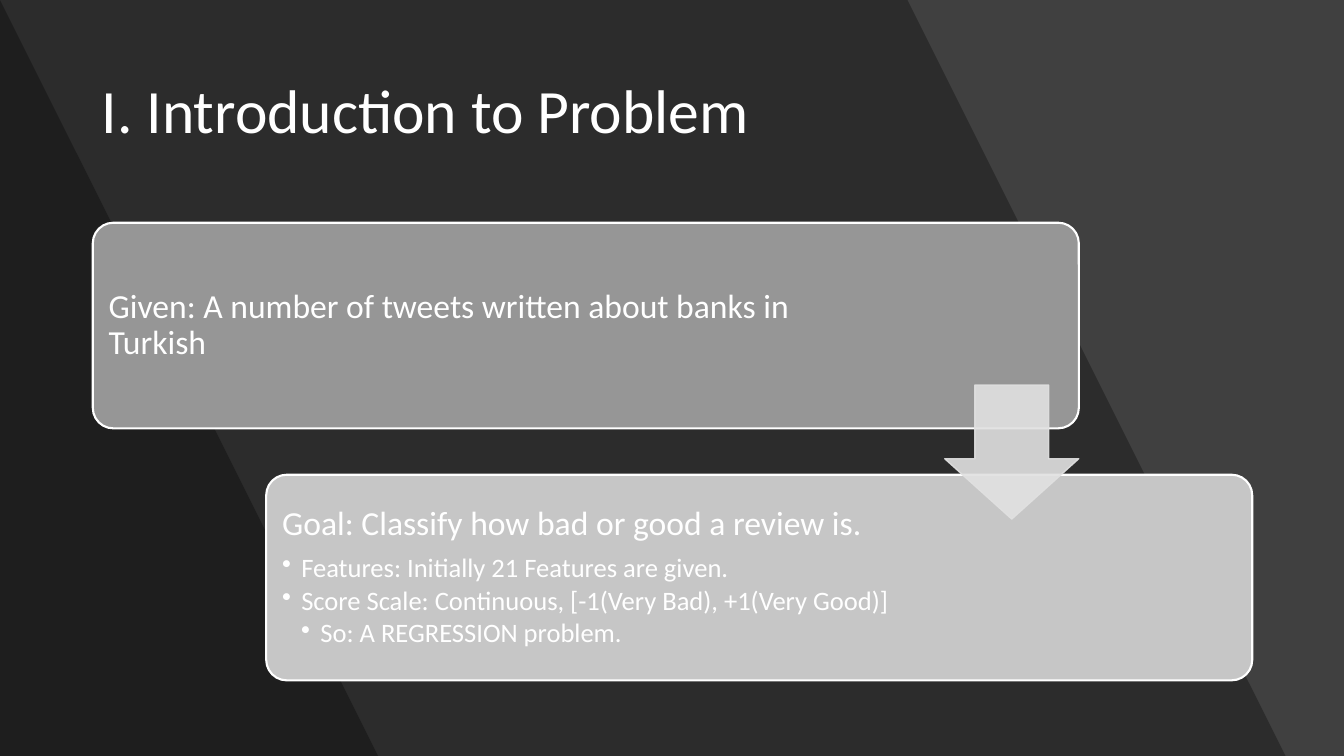
from pptx import Presentation
from pptx.dml.color import RGBColor
from pptx.enum.shapes import MSO_SHAPE as Kind
from pptx.enum.text import MSO_ANCHOR as Anchor
from pptx.oxml.ns import qn
from pptx.util import Inches, Pt
from lxml.etree import SubElement

WIDE, HIGH = 13.33, 7.5
FONT = "Calibri"
WHITE = RGBColor(0xFF, 0xFF, 0xFF)
BLACK = RGBColor(0, 0, 0)
BACK = RGBColor(0x40, 0x40, 0x40)
MID = RGBColor(0x96, 0x96, 0x96)
LIGHT = RGBColor(0xC6, 0xC6, 0xC6)
PALE = RGBColor(0xE1, 0xE1, 0xE1)

TITLE = "I. Introduction to Problem"
BANDS = [(9.42, 12.89), (0.44, 3.92)]
CARDS = [
    (MID, 7.66, [(0, "Given: A number of tweets written about banks in Turkish")]),
    (LIGHT, 6.6, [
        (0, "Goal: Classify how bad or good a review is."),
        (1, "Features: Initially 21 Features are given."),
        (1, "Score Scale: Continuous, [-1(Very Bad), +1(Very Good)]"),
        (2, "So: A REGRESSION problem."),
    ]),
]
LEFT, TOP = 0.92, 2.21
CARD_W, CARD_H = 9.78, 2.04
STEP_X, STEP_Y = 1.72, 2.5
PAD, INDENT, ARROW = 0.06, 0.19, 1.33


def paint(shape, fill, line=None, width=0, alpha=100):
    shape.shadow.inherit = False
    shape.fill.solid()
    shape.fill.fore_color.rgb = fill
    if line is None:
        shape.line.fill.background()
    else:
        shape.line.color.rgb = line
        shape.line.width = Pt(width)
    if alpha < 100:
        for color in shape._element.spPr.iter(qn("a:srgbClr")):
            SubElement(color, qn("a:alpha"), val=str(alpha * 1000))


def add_band(slide, top, foot):
    pen = slide.shapes.build_freeform(0, 0, scale=Inches(1))
    pen.add_line_segments([(top, 0), (foot, HIGH), (0, HIGH)], close=True)
    paint(pen.convert_to_shape(), BLACK, alpha=30)


def add_block(slide, kind, box, adjust):
    shape = slide.shapes.add_shape(kind, *map(Inches, box))
    for i, share in enumerate(adjust):
        shape.adjustments[i] = share
    return shape


def add_text(slide, box, rows, sizes, inset):
    frame = slide.shapes.add_textbox(*map(Inches, box)).text_frame
    frame.word_wrap = True
    frame.vertical_anchor = Anchor.MIDDLE
    frame.margin_left = frame.margin_right = Inches(0.1)
    frame.margin_top = frame.margin_bottom = Inches(inset)
    frame.text = "\n".join(text for level, text in rows)
    for para, (level, text) in zip(frame.paragraphs, rows):
        size = sizes[min(level, 1)]
        para.line_spacing = 0.9
        para.space_after = Pt(size * (0.15 if level else 0.35))
        font = para.runs[0].font
        font.name, font.size, font.color.rgb = FONT, Pt(size), WHITE
        if level:
            para.level = level
            props = para._p.get_or_add_pPr()
            props.set("marL", str(Inches(INDENT * level)))
            props.set("indent", str(-Inches(INDENT)))
            SubElement(props, qn("a:buChar"), char="•")


def main():
    """Build the problem introduction slide."""
    deck = Presentation()
    deck.slide_width, deck.slide_height = Inches(WIDE), Inches(HIGH)
    slide = deck.slides.add_slide(deck.slide_layouts[6])
    slide.background.fill.solid()
    slide.background.fill.fore_color.rgb = BACK
    for top, foot in BANDS:
        add_band(slide, top, foot)
    add_text(slide, (0.91, 0.4, 11.51, 1.45), [(0, TITLE)], [44], 0.05)
    for i, (color, wide, rows) in enumerate(CARDS):
        x, y = LEFT + i * STEP_X, TOP + i * STEP_Y
        card = add_block(slide, Kind.ROUNDED_RECTANGLE, (x, y, CARD_W, CARD_H), [0.1])
        paint(card, color, WHITE, 1.5)
        box = (x + PAD, y + PAD, wide, CARD_H - 2 * PAD)
        add_text(slide, box, rows, [24, 19], 0.1)
    box = (LEFT + CARD_W - ARROW, 3.82, ARROW, ARROW)
    arrow = add_block(slide, Kind.DOWN_ARROW, box, [0.55, 0.45])
    paint(arrow, PALE, PALE, 1, 90)
    deck.save("out.pptx")


if __name__ == "__main__":
    main()
